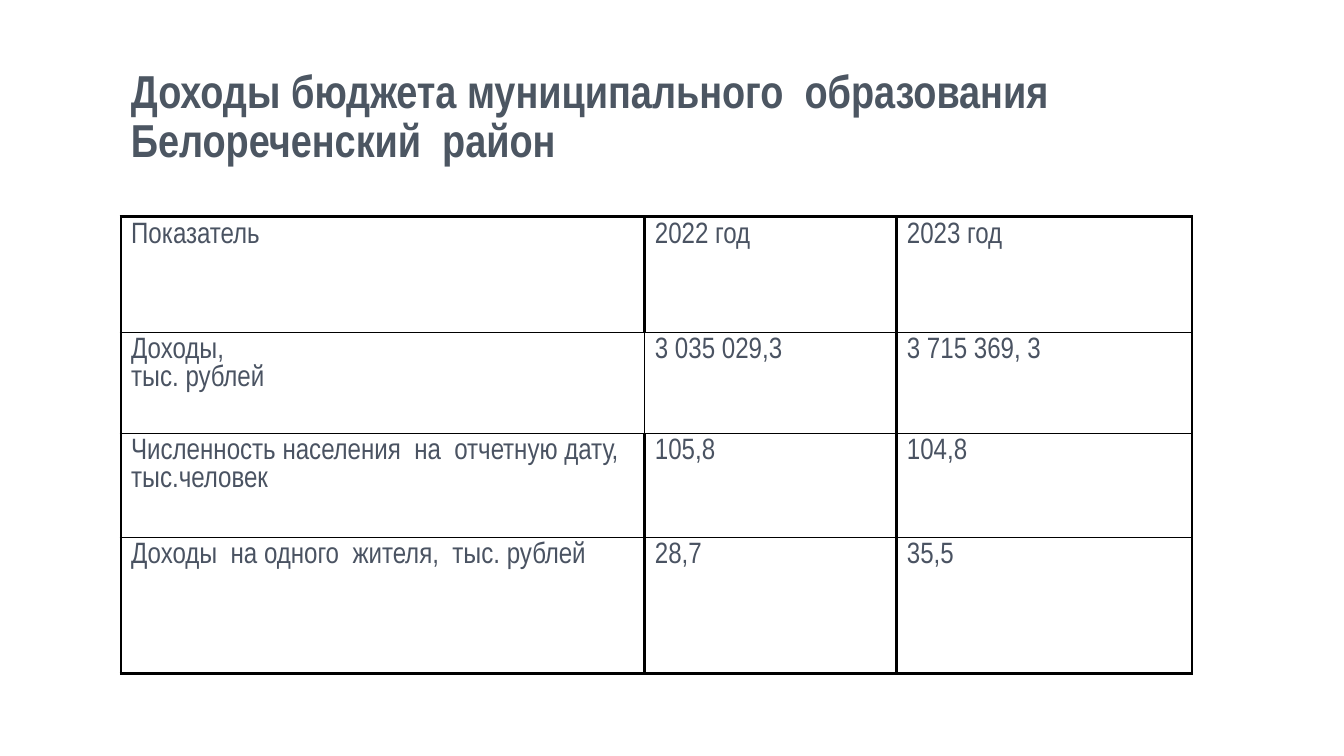
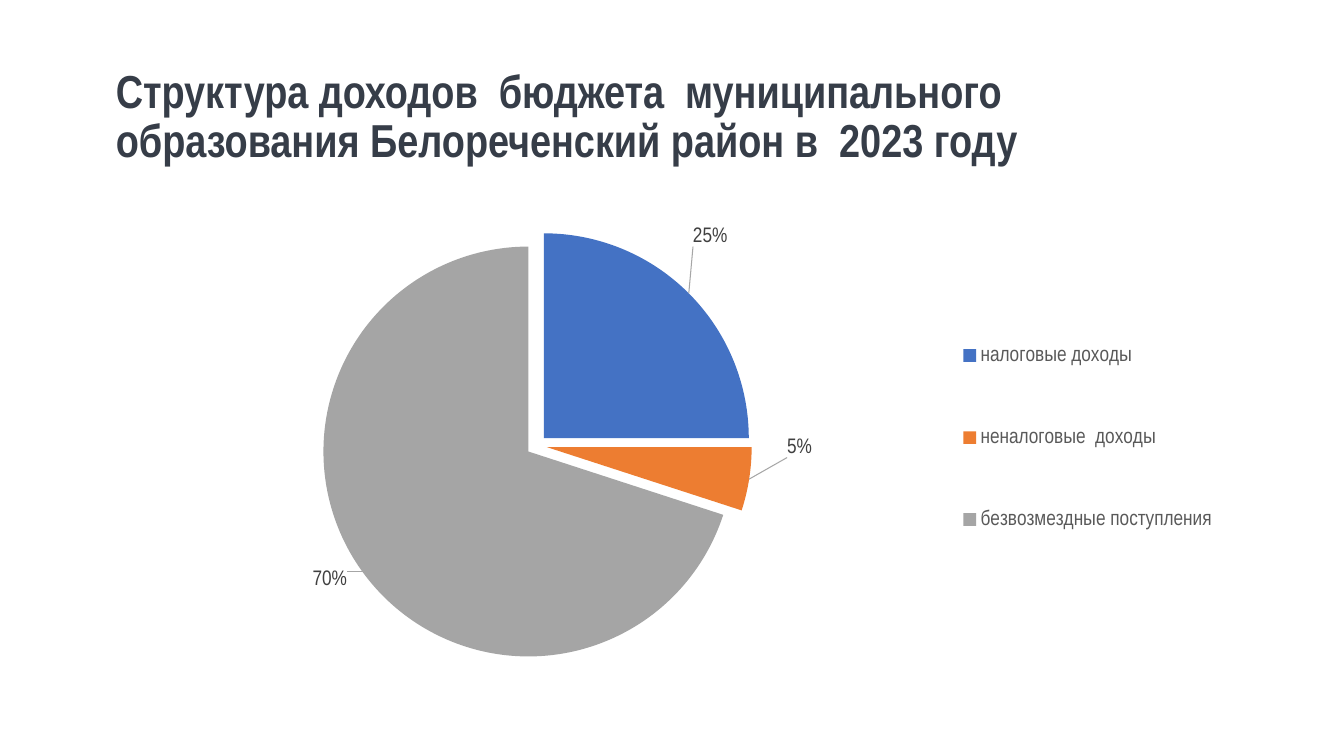
from copy import deepcopy
from dataclasses import dataclass

from lxml.etree import SubElement
from pptx import Presentation
from pptx.chart.data import CategoryChartData
from pptx.dml.color import RGBColor
from pptx.enum.chart import XL_CHART_TYPE, XL_LABEL_POSITION, XL_LEGEND_POSITION
from pptx.enum.text import MSO_ANCHOR
from pptx.oxml import parse_xml
from pptx.oxml.ns import nsdecls, qn
from pptx.util import Cm, Pt


@dataclass(frozen=True)
class Theme:
    font: str = "Arial Narrow"
    title_size: float = 33
    table_size: float = 21
    chart_size: float = 15
    table_text: str = "4A5362"
    legend_text: str = "595959"
    label_text: str = "404040"
    border: str = "000000"
    leader: str = "A6A6A6"
    thick: float = 2.25
    thin: float = 1
    slices: tuple = ("4472C4", "ED7D31", "A5A5A5")


THEME = Theme()


def set_attributes(target, values):
    for name, value in values.items():
        setattr(target, name, value)


def style_font(font, size, color, bold=False):
    set_attributes(font, {"name": THEME.font, "size": Pt(size), "bold": bold})
    font.color.rgb = RGBColor.from_string(color)


# Title
def add_title(slide, box, text, color):
    frame = slide.shapes.add_textbox(*map(Cm, box)).text_frame
    set_attributes(frame, {"word_wrap": True, "vertical_anchor": MSO_ANCHOR.MIDDLE})
    paragraph = frame.paragraphs[0]
    set_attributes(paragraph, {"text": text, "line_spacing": 0.9})
    style_font(paragraph.font, THEME.title_size, color, bold=True)


# Table
def set_borders(cell, widths):
    properties = cell._tc.get_or_add_tcPr()
    for side, width in zip("LRTB", widths):
        line = SubElement(properties, qn(f"a:ln{side}"), w=str(Pt(width)))
        fill = SubElement(line, qn("a:solidFill"))
        SubElement(fill, qn("a:srgbClr"), val=THEME.border)


def add_income_table(slide, box, rows, column_widths, row_heights):
    shape = slide.shapes.add_table(len(rows), len(column_widths), *map(Cm, box))
    table = shape.table
    set_attributes(table, {"first_row": False, "horz_banding": False})
    for column, width in zip(table.columns, column_widths):
        column.width = Cm(width)
    for row, height in zip(table.rows, row_heights):
        row.height = Cm(height)

    thick, thin = THEME.thick, THEME.thin
    last_row = len(rows) - 1
    for row_index, texts in enumerate(rows):
        for column_index, text in enumerate(texts):
            cell = table.cell(row_index, column_index)
            place = (row_index, column_index)
            set_borders(cell, (
                thin if place == (1, 1) else thick,
                thin if place == (1, 0) else thick,
                thick if row_index == 0 else thin,
                thick if row_index == last_row else thin,
            ))
            cell.fill.background()
            cell.text = text
            for paragraph in cell.text_frame.paragraphs:
                style_font(paragraph.font, THEME.table_size, THEME.table_text)


# Pie chart
def manual_layout(**values):
    parts = "".join(f'<c:{name} val="{value}"/>' for name, value in values.items())
    return parse_xml(
        f'<c:layout {nsdecls("c")}><c:manualLayout>{parts}</c:manualLayout></c:layout>'
    )


def place_labels(labels, offsets):
    """Give each slice its own label, moved by a share of the chart size."""
    group = labels._element
    shared = [part for part in group if part.tag != qn("c:showLeaderLines")]
    for index, (x, y) in enumerate(offsets):
        label = parse_xml(f'<c:dLbl {nsdecls("c")}><c:idx val="{index}"/></c:dLbl>')
        label.append(manual_layout(x=x, y=y))
        label.extend(deepcopy(part) for part in shared)
        group.insert(index, label)
    for part in group.findall(qn("c:showLeaderLines")):
        group.remove(part)
    group.append(parse_xml(f'<c:showLeaderLines {nsdecls("c")} val="1"/>'))
    group.append(parse_xml(
        f'<c:leaderLines {nsdecls("c", "a")}><c:spPr><a:ln w="{Pt(0.75)}"><a:solidFill>'
        f'<a:srgbClr val="{THEME.leader}"/></a:solidFill></a:ln></c:spPr></c:leaderLines>'
    ))


def add_income_pie(slide, box, shares, label_offsets):
    chart_data = CategoryChartData()
    chart_data.categories = list(shares)
    chart_data.add_series("Доходы", list(shares.values()))
    chart = slide.shapes.add_chart(XL_CHART_TYPE.PIE, *map(Cm, box), chart_data).chart
    chart.has_title = False
    style_font(chart.font, THEME.chart_size, THEME.border)

    # Plot area
    plot_area = chart._chartSpace.chart.plotArea
    for layout in plot_area.findall(qn("c:layout")):
        plot_area.remove(layout)
    plot_area.insert(0, manual_layout(
        layoutTarget="inner", xMode="edge", yMode="edge", x=0.07, y=0.09, w=0.55, h=0.81
    ))

    # Slices
    plot = chart.plots[0]
    plot.vary_by_categories = True
    series = plot.series[0]
    for index, color in enumerate(THEME.slices):
        fill = series.points[index].format.fill
        fill.solid()
        fill.fore_color.rgb = RGBColor.from_string(color)
    explosion = parse_xml(f'<c:explosion {nsdecls("c")} val="5"/>')
    series._element.find(qn("c:dPt")).addprevious(explosion)

    # Labels
    labels = series.data_labels
    set_attributes(labels, {
        "show_value": False,
        "show_percentage": True,
        "number_format": "0%",
        "number_format_is_linked": False,
        "position": XL_LABEL_POSITION.OUTSIDE_END,
    })
    style_font(labels.font, THEME.chart_size, THEME.label_text)
    place_labels(labels, label_offsets)

    # Legend
    chart.has_legend = True
    legend = chart.legend
    set_attributes(legend, {
        "position": XL_LEGEND_POSITION.RIGHT, "include_in_layout": False
    })
    style_font(legend.font, THEME.chart_size, THEME.legend_text)
    for layout in legend._element.findall(qn("c:layout")):
        legend._element.remove(layout)
    legend._element.find(qn("c:legendPos")).addnext(
        manual_layout(xMode="edge", yMode="edge", x=0.73, y=0.19, w=0.26, h=0.58)
    )


def build_table_slide(slide):
    add_title(
        slide, (3.05, 1.07, 25.32, 3.81),
        "Доходы бюджета муниципального  образования Белореченский  район", "4C5662",
    )
    add_income_table(
        slide, (3.05, 5.46, 26.99, 11.51),
        [
            ("Показатель", "2022 год", "2023 год"),
            ("Доходы,\nтыс. рублей", "3 035 029,3", "3 715 369, 3"),
            ("Численность населения  на  отчетную дату, тыс.человек", "105,8", "104,8"),
            ("Доходы  на одного  жителя,  тыс. рублей", "28,7", "35,5"),
        ],
        column_widths=(13.2, 6.35, 7.44),
        row_heights=(2.92, 2.54, 2.62, 3.43),
    )


def build_pie_slide(slide):
    add_title(
        slide, (2.67, 1.07, 27.94, 3.81),
        "Структура доходов  бюджета  муниципального  образования "
        "Белореченский район в  2023 году", "363D48",
    )
    add_income_pie(
        slide, (4.22, 4.6, 26.97, 13.39),
        {"налоговые доходы": 25, "неналоговые  доходы": 5, "безвозмездные поступления": 70},
        label_offsets=((0, -0.08), (0.03, -0.08), (-0.01, -0.01)),
    )


def main():
    presentation = Presentation()
    set_attributes(presentation, {"slide_width": Cm(33.87), "slide_height": Cm(19.05)})
    blank = presentation.slide_layouts[6]
    for build in (build_table_slide, build_pie_slide):
        build(presentation.slides.add_slide(blank))
    presentation.save("out.pptx")


if __name__ == "__main__":
    main()
